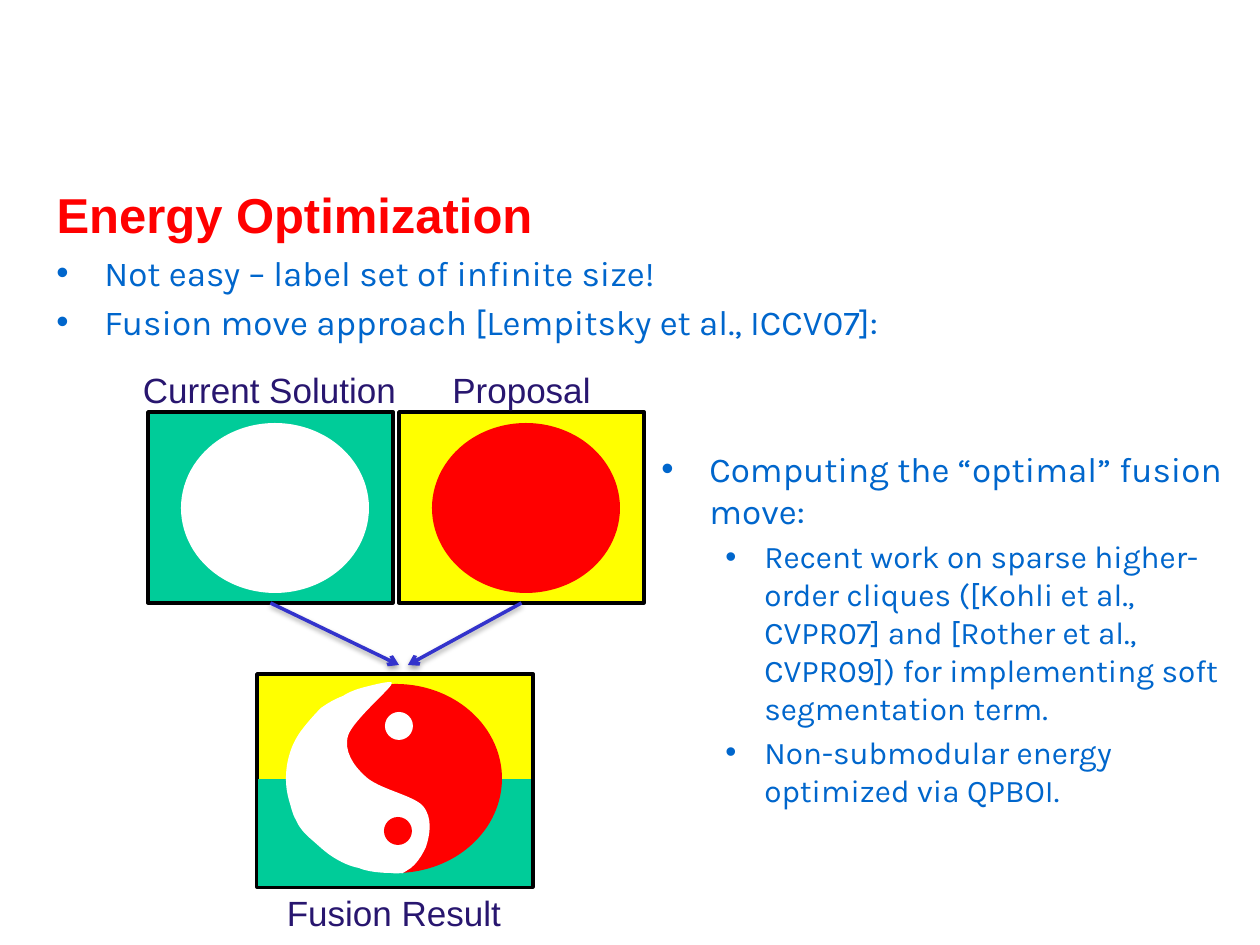
from lxml.etree import SubElement
from pptx import Presentation
from pptx.dml.color import RGBColor
from pptx.enum.shapes import MSO_CONNECTOR as CONN, MSO_SHAPE as SHAPE
from pptx.enum.text import MSO_ANCHOR as ANCHOR, PP_ALIGN as ALIGN
from pptx.oxml.ns import qn
from pptx.util import Pt

PX = 914400 / 126
COLORS = {"red": "FF0000", "blue": "0066CC", "navy": "28166F", "arrow": "3333CC",
          "green": "00CC99", "yellow": "FFFF00", "white": "FFFFFF", "black": "000000"}

# Bezier outlines: a start point, then two controls and an end per curve
WHITE_HALF = [
    (396, 873), (411, 874), (421, 858), (426, 847), (430, 835), (433, 818), (423, 806),
    (413, 795), (378, 789), (365, 776), (353, 765), (344, 751), (348, 736),
    (352, 721), (396, 684), (391, 684), (386, 684), (326, 708), (318, 735),
    (307, 760), (323, 816), (335, 839), (348, 863), (381, 872), (396, 873)]
WHITE_RIM = [
    (392, 683), (392, 680), (373, 685), (365, 687), (357, 689), (349, 692), (343, 696),
    (335, 699), (328, 703), (321, 708), (315, 714), (307, 723), (301, 731),
    (296, 738), (292, 746), (290, 753), (287, 762), (286, 771), (286, 779),
    (286, 786), (287, 793), (289, 800), (291, 806), (292, 813), (296, 820),
    (299, 827), (304, 833), (311, 839), (318, 845), (325, 852), (333, 857),
    (341, 862), (349, 866), (359, 868), (368, 872), (383, 873), (391, 873),
    (397, 874), (401, 873), (401, 873), (403, 873), (402, 874), (403, 873),
    (404, 872), (408, 871), (410, 866), (412, 862), (425, 858), (415, 847),
    (404, 837), (363, 816), (350, 799), (338, 781), (336, 757), (338, 741),
    (340, 726), (354, 714), (363, 706), (371, 696), (392, 687), (392, 683)]


def px(*values):
    return [round(v * PX) for v in values]


def rgb(name):
    return RGBColor.from_string(COLORS[name])


def write(p, text, size=20, font="Arial", color="navy", bold=False, align=ALIGN.LEFT):
    r = p.add_run()
    r.text = text
    r.font.size, r.font.name, r.font.bold = Pt(size), font, bold
    r.font.color.rgb = rgb(color)
    p.alignment = align


class Deck:
    bullet_levels = [(20, 48, -48), (18, 103, -39)]  # size, margin, indent

    def __init__(self):
        self.prs = Presentation()
        self.prs.slide_width, self.prs.slide_height = px(1260, 945)
        self.s = self.prs.slides.add_slide(self.prs.slide_layouts[5])

    def title(self, text, *box):
        sp = self.s.shapes.title
        sp.left, sp.top, sp.width, sp.height = px(*box)
        sp.text_frame.vertical_anchor = ANCHOR.MIDDLE
        write(sp.text_frame.paragraphs[0], text, size=28, color="red", bold=True)

    def textbox(self, *box):
        tf = self.s.shapes.add_textbox(*px(*box)).text_frame
        tf.word_wrap = True
        return tf

    def caption(self, text, *box):
        write(self.textbox(*box).paragraphs[0], text, align=ALIGN.CENTER)

    def bullets(self, items, *box):
        tf = self.textbox(*box)
        for i, (level, text) in enumerate(items):
            p = tf.add_paragraph() if i else tf.paragraphs[0]
            size, margin, indent = self.bullet_levels[level]
            pPr = p._p.get_or_add_pPr()
            pPr.set("marL", str(px(margin)[0]))
            pPr.set("indent", str(px(indent)[0]))
            SubElement(pPr, qn("a:buFont"), typeface="Arial")
            SubElement(pPr, qn("a:buChar"), char="•")
            p.level = level
            if i:
                p.space_before = Pt(size * 0.2)
            write(p, text, size=size, font="Karla", color="blue")

    def paint(self, sp, fill, outlined=False):
        sp.shadow.inherit = False
        sp.fill.solid()
        sp.fill.fore_color.rgb = rgb(fill)
        if outlined:
            sp.line.color.rgb = rgb("black")
            sp.line.width = Pt(2)
        else:
            sp.line.fill.background()
        return sp

    def rect(self, fill, *box, outlined=False):
        sp = self.s.shapes.add_shape(SHAPE.RECTANGLE, *px(*box))
        return self.paint(sp, fill, outlined)

    def ellipse(self, fill, *box):
        return self.paint(self.s.shapes.add_shape(SHAPE.OVAL, *px(*box)), fill)

    def curve(self, fill, points):
        start, *rest = points
        fb = self.s.shapes.build_freeform(*start, scale=PX)
        fb.add_line_segments(rest, close=True)
        sp = fb.convert_to_shape()
        # Turn every three straight segments into one cubic curve
        segments = list(sp._element.iter(qn("a:lnTo")))
        for first, second, third in zip(*[iter(segments)] * 3):
            first.tag = qn("a:cubicBezTo")
            for segment in (second, third):
                first.append(segment[0])
                segment.getparent().remove(segment)
        return self.paint(sp, fill)

    def arrow(self, source, x, y):
        c = self.s.shapes.add_connector(CONN.STRAIGHT, 0, 0, *px(x, y))
        c.begin_connect(source, 2)
        c.line.color.rgb = rgb("arrow")
        c.line.width = Pt(2)
        SubElement(c.line._get_or_add_ln(), qn("a:tailEnd"), type="arrow")
        effects = SubElement(c._element.spPr, qn("a:effectLst"))
        shadow = SubElement(effects, qn("a:outerShdw"), blurRad="40000", dist="23000",
                            dir="5400000", rotWithShape="0")
        color = SubElement(shadow, qn("a:srgbClr"), val=COLORS["black"])
        SubElement(color, qn("a:alpha"), val="35000")


def main():
    deck = Deck()

    # Heading and introduction
    deck.title("Energy Optimization", 44, 182, 1173, 63)
    deck.bullets([(0, "Not easy – label set of infinite size!"),
                  (0, "Fusion move approach [Lempitsky et al., ICCV07]:")],
                 44, 245, 1179, 536)

    # Two input labelings
    inputs = []
    for x, back, front in ((148, "green", "white"), (399, "yellow", "red")):
        inputs.append(deck.rect(back, x, 412, 245, 191, outlined=True))
        deck.ellipse(front, x + 33, 423, 188, 170)

    # Fused labeling
    deck.rect("yellow", 257, 674, 276, 213, outlined=True)
    deck.rect("green", 258, 779, 273, 107)
    deck.ellipse("red", 290, 684, 212, 189)
    deck.curve("white", WHITE_HALF)
    deck.ellipse("white", 385, 712, 28, 28)
    deck.curve("white", WHITE_RIM)
    deck.ellipse("red", 384, 817, 28, 28)

    # Arrows from the inputs to the result
    for source, x in zip(inputs, (399, 408)):
        deck.arrow(source, x, 665)

    # Captions
    deck.caption("Current Solution", 126, 362, 287, 55)
    deck.caption("Proposal", 397, 362, 249, 55)
    deck.caption("Fusion Result", 253, 885, 282, 45)

    # Notes on the fusion move
    deck.bullets([(0, "Computing the “optimal” fusion move:"),
                  (1, "Recent work on sparse higher-order cliques ([Kohli et al., CVPR07] "
                      "and [Rother et al., CVPR09]) for implementing soft segmentation term."),
                  (1, "Non-submodular energy optimized via QPBOI.")],
                 649, 441, 591, 401)

    deck.prs.save("out.pptx")


if __name__ == "__main__":
    main()
